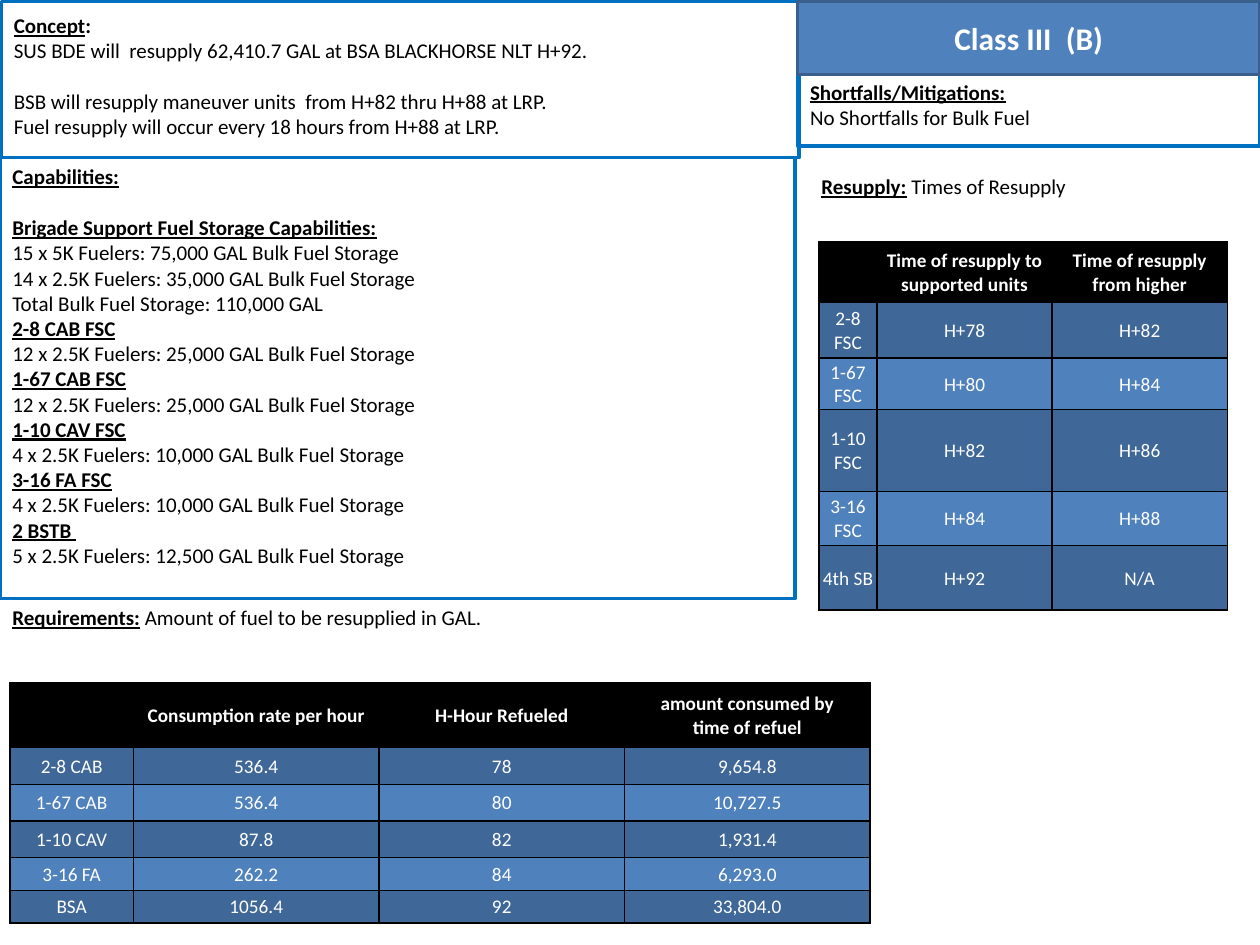
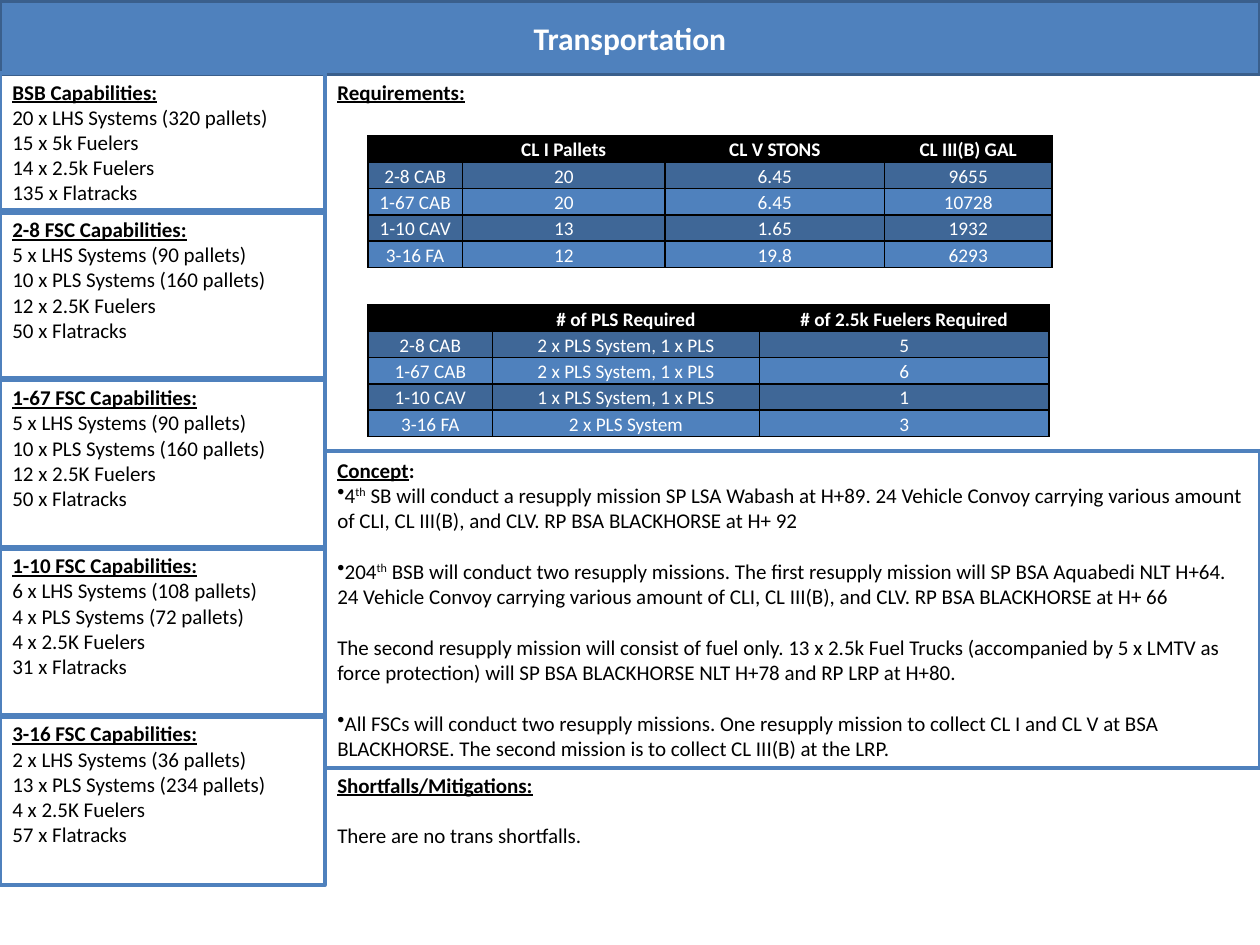
from dataclasses import dataclass

from lxml import etree
from pptx import Presentation, util as u
from pptx.dml.color import RGBColor as Rgb
from pptx.enum import shapes, text
from pptx.oxml import ns


@dataclass(frozen=True)
class Theme:
    font: str = "Calibri"
    title: float = 18
    body: float = 12
    cell: float = 11
    gap: float = 14.6  # one line of body text
    black: str = "000000"
    white: str = "FFFFFF"
    blue: str = "4F81BD"
    edge: str = "3A5F8C"
    dark: str = "3F6797"
    frame: str = "0070C0"


T = Theme()
TOP, MID, LOW = text.MSO_ANCHOR.TOP, text.MSO_ANCHOR.MIDDLE, text.MSO_ANCHOR.BOTTOM
MARKS = {
    "_": {"bold": True, "underline": True},
    "*": {"bold": True},
    "^": {},
}


def panel(slide, box, lines=(), line=None, fill=None, wide=2.25,
          size=T.body, ink=T.black, anchor=TOP, align=None):
    """Draw a box of paragraphs; it is a plain text box if it has no line.

    A paragraph may open with ¶ (a line of space above) or • (a bullet).
    Its runs are split by |, and open with _ (heading), * (bold) or ^ (raised).
    """
    spot = [u.Cm(n) for n in box]
    if line:
        item = slide.shapes.add_shape(shapes.MSO_SHAPE.RECTANGLE, *spot)
        item.shadow.inherit = False
        item.line.color.rgb = Rgb.from_string(line)
        item.line.width = u.Pt(wide)
        if fill:
            item.fill.solid()
            item.fill.fore_color.rgb = Rgb.from_string(fill)
        else:
            item.fill.background()
    else:
        item = slide.shapes.add_textbox(*spot)
    body = item.text_frame
    body.word_wrap = True
    body.vertical_anchor = anchor
    for i, words in enumerate(lines):
        para = body.add_paragraph() if i else body.paragraphs[0]
        para.alignment = align or text.PP_ALIGN.LEFT
        if words.startswith("¶"):
            para.space_before = u.Pt(T.gap)
            words = words[1:]
        if words.startswith("•"):
            props = para._p.get_or_add_pPr()
            etree.SubElement(props, ns.qn("a:buChar")).set("char", "•")
            words = words[1:]
        for part in words.split("|"):
            mark = part[0] if part[0] in MARKS else ""
            run = para.add_run()
            run.text = part[len(mark):]
            look = {"name": T.font, "size": u.Pt(size), **MARKS.get(mark, {})}
            for key, val in look.items():
                setattr(run.font, key, val)
            run.font.color.rgb = Rgb.from_string(ink)
            if mark == "^":
                run.font._element.set("baseline", "30000")


def grid(slide, left, top, cols, rows, data, anchor):
    """Draw a table with a black head row and two blues taking turns below."""
    spot = [u.Cm(n) for n in (left, top, sum(cols), sum(rows))]
    table = slide.shapes.add_table(len(rows), len(cols), *spot).table
    table.first_row = table.horz_banding = False
    for col, wide in zip(table.columns, cols):
        col.width = u.Cm(wide)
    for r, (high, values) in enumerate(zip(rows, data)):
        table.rows[r].height = u.Cm(high)
        back = T.black if r == 0 else (T.blue, T.dark)[r % 2]
        for c, value in enumerate(values):
            cell = table.cell(r, c)
            props = cell._tc.get_or_add_tcPr()
            for side in ("lnL", "lnR", "lnT", "lnB"):
                rule = etree.SubElement(props, ns.qn("a:" + side), w=str(u.Pt(1)))
                paint = etree.SubElement(rule, ns.qn("a:solidFill"))
                etree.SubElement(paint, ns.qn("a:srgbClr"), val=T.black)
            look = {"margin_left": u.Cm(0.02), "margin_right": u.Cm(0.02),
                    "margin_top": u.Cm(0.02), "margin_bottom": 0,
                    "vertical_anchor": anchor, "text": value}
            for key, val in look.items():
                setattr(cell, key, val)
            cell.fill.solid()
            cell.fill.fore_color.rgb = Rgb.from_string(back)
            for para in cell.text_frame.paragraphs:
                para.alignment = text.PP_ALIGN.CENTER
                if not value:
                    para._p.get_or_add_endParaRPr().set("sz", str(T.cell * 100))
                for run in para.runs:
                    look = {"name": T.font, "size": u.Pt(T.cell), "bold": r == 0}
                    for key, val in look.items():
                        setattr(run.font, key, val)
                    run.font.color.rgb = Rgb.from_string(T.white)


BAND = {"line": T.edge, "fill": T.blue, "wide": 2, "size": T.title,
        "ink": T.white, "anchor": MID, "align": text.PP_ALIGN.CENTER}

deck = Presentation()
deck.slide_width, deck.slide_height = u.Cm(25.4), u.Cm(19.05)
blank = deck.slide_layouts[6]

# Fuel
fuel = deck.slides.add_slide(blank)
for box in ((0.03, 0.03, 16.08, 3.15), (16.08, 1.47, 9.32, 1.47),
            (0, 3.18, 16.03, 8.89)):
    panel(fuel, box, line=T.frame, wide=2)
panel(fuel, (16.08, 0.03, 9.32, 1.47), ["*Class III  (B)"], **BAND)

panel(fuel, (0.03, 0.13, 15.85, 2.82), [
    "_Concept|*:",
    "SUS BDE will  resupply 62,410.7 GAL at BSA BLACKHORSE NLT H+92.",
    "¶BSB will resupply maneuver units  from H+82 thru H+88 at LRP.",
    "Fuel resupply will occur every 18 hours from H+88 at LRP.",
])
stores = [
    ("2-8 CAB FSC", "12", "25,000"),
    ("1-67 CAB FSC", "12", "25,000"),
    ("1-10 CAV FSC", "4", "10,000"),
    ("3-16 FA FSC", "4", "10,000"),
    ("2 BSTB ", "5", "12,500"),
]
lines = [
    "_Capabilities:",
    "¶_Brigade Support Fuel Storage Capabilities:",
    "15 x 5K Fuelers: 75,000 GAL Bulk Fuel Storage",
    "14 x 2.5K Fuelers: 35,000 GAL Bulk Fuel Storage",
    "Total Bulk Fuel Storage: 110,000 GAL",
]
for unit, count, load in stores:
    lines += [f"_{unit}", f"{count} x 2.5K Fuelers: {load} GAL Bulk Fuel Storage"]
panel(fuel, (0, 3.18, 16.1, 12.07), lines)
panel(fuel, (0, 12.07, 16.08, 0.76),
      ["_Requirements:| Amount of fuel to be resupplied in GAL."])
panel(fuel, (16.08, 1.47, 9.32, 3.58),
      ["_Shortfalls/Mitigations:", "No Shortfalls for Bulk Fuel"])

grid(fuel, 0.2, 13.77, [2.49] + [4.95] * 3, [1.3] + [0.74] * 3 + [0.66] * 2, [
    ("", "Consumption rate per hour", "H-Hour Refueled",
     "amount consumed by\ntime of refuel"),
    ("2-8 CAB", "536.4", "78", "9,654.8"),
    ("1-67 CAB", "536.4", "80", "10,727.5"),
    ("1-10 CAV", "87.8", "82", "1,931.4"),
    ("3-16 FA", "262.2", "84", "6,293.0"),
    ("BSA", "1056.4", "92", "33,804.0"),
], MID)
grid(fuel, 16.51, 4.88, [1.17, 3.53, 3.53], [1.22, 1.12, 1.04, 1.65, 1.09, 1.3], [
    ("", "Time of resupply to supported units", "Time of resupply from higher"),
    ("2-8 FSC", "H+78", "H+82"),
    ("1-67 FSC", "H+80", "H+84"),
    ("1-10 FSC", "H+82", "H+86"),
    ("3-16 FSC", "H+84", "H+88"),
    ("4th SB", "H+92", "N/A"),
], MID)
panel(fuel, (16.31, 3.38, 8.69, 0.76), ["_Resupply:| Times of Resupply"])

# Transportation
trans = deck.slides.add_slide(blank)
panel(trans, (0, 0.03, 25.4, 1.47), ["*Transportation"], **BAND)

panel(trans, (0, 1.47, 6.55, 2.82), [
    "_BSB Capabilities:", "20 x LHS Systems (320 pallets)",
    "15 x 5k Fuelers", "14 x 2.5k Fuelers", "135 x Flatracks",
], line=T.blue)
fleets = [
    ("2-8", "5", "90", "10", "160", "12", "50"),
    ("1-67", "5", "90", "10", "160", "12", "50"),
    ("1-10", "6", "108", "4", "72", "4", "31"),
    ("3-16", "2", "36", "13", "234", "4", "57"),
]
for i, (unit, lhs, load, pls, haul, tanks, racks) in enumerate(fleets):
    panel(trans, (0, 4.24 + 3.39 * i, 6.55, 3.43), [
        f"_{unit} FSC Capabilities:",
        f"{lhs} x LHS Systems ({load} pallets)",
        f"{pls} x PLS Systems ({haul} pallets)",
        f"{tanks} x 2.5K Fuelers",
        f"{racks} x Flatracks",
    ], line=T.blue)

grid(trans, 7.42, 2.74, [1.9, 4.09, 4.42, 3.38], [0.53] * 5, [
    ("", "CL I Pallets", "CL V STONS", "CL III(B) GAL"),
    ("2-8 CAB", "20", "6.45", "9655"),
    ("1-67 CAB", "20", "6.45", "10728"),
    ("1-10 CAV", "13", "1.65", "1932"),
    ("3-16 FA", "12", "19.8", "6293"),
], LOW)
grid(trans, 7.42, 6.15, [2.51, 5.38, 5.84], [0.53] * 5, [
    ("", "# of PLS Required", "# of 2.5k Fuelers Required"),
    ("2-8 CAB", "2 x PLS System, 1 x PLS", "5"),
    ("1-67 CAB", "2 x PLS System, 1 x PLS", "6"),
    ("1-10 CAV", "1 x PLS System, 1 x PLS", "1"),
    ("3-16 FA", "2 x PLS System", "3"),
], LOW)

panel(trans, (6.55, 1.47, 18.85, 0.76), ["_Requirements:"])
convoy = ("24 Vehicle Convoy carrying various amount of CLI, CL III(B), and CLV. "
          "RP BSA BLACKHORSE at H+ ")
panel(trans, (6.55, 9.09, 18.85, 6.4), [
    "_Concept|*:",
    f"•4|^th| SB will conduct a resupply mission SP LSA Wabash at H+89. {convoy}92",
    "¶•204|^th| BSB will conduct two resupply missions. The first resupply mission "
    f"will SP BSA Aquabedi NLT H+64. {convoy}66",
    "¶The second resupply mission will consist of fuel only. 13 x 2.5k Fuel Trucks "
    "(accompanied by 5 x LMTV as force protection) will SP BSA BLACKHORSE NLT H+78 "
    "and RP LRP at H+80.",
    "¶•All FSCs will conduct two resupply missions. One resupply mission to collect "
    "CL I and CL V at BSA BLACKHORSE. The second mission is to collect CL III(B) "
    "at the LRP.",
], line=T.blue)
panel(trans, (6.55, 15.44, 13.13, 3.6),
      ["_Shortfalls/Mitigations:", "¶There are no trans shortfalls."])

deck.save("out.pptx")
